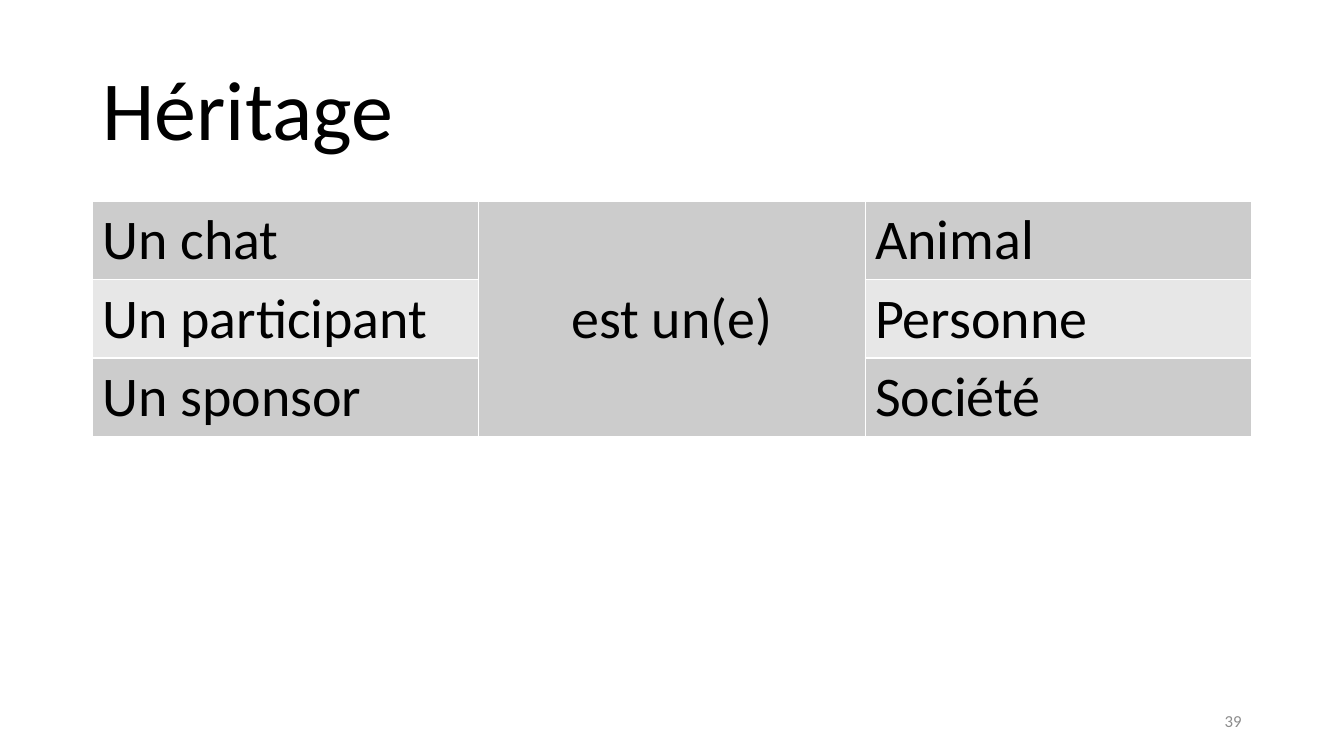
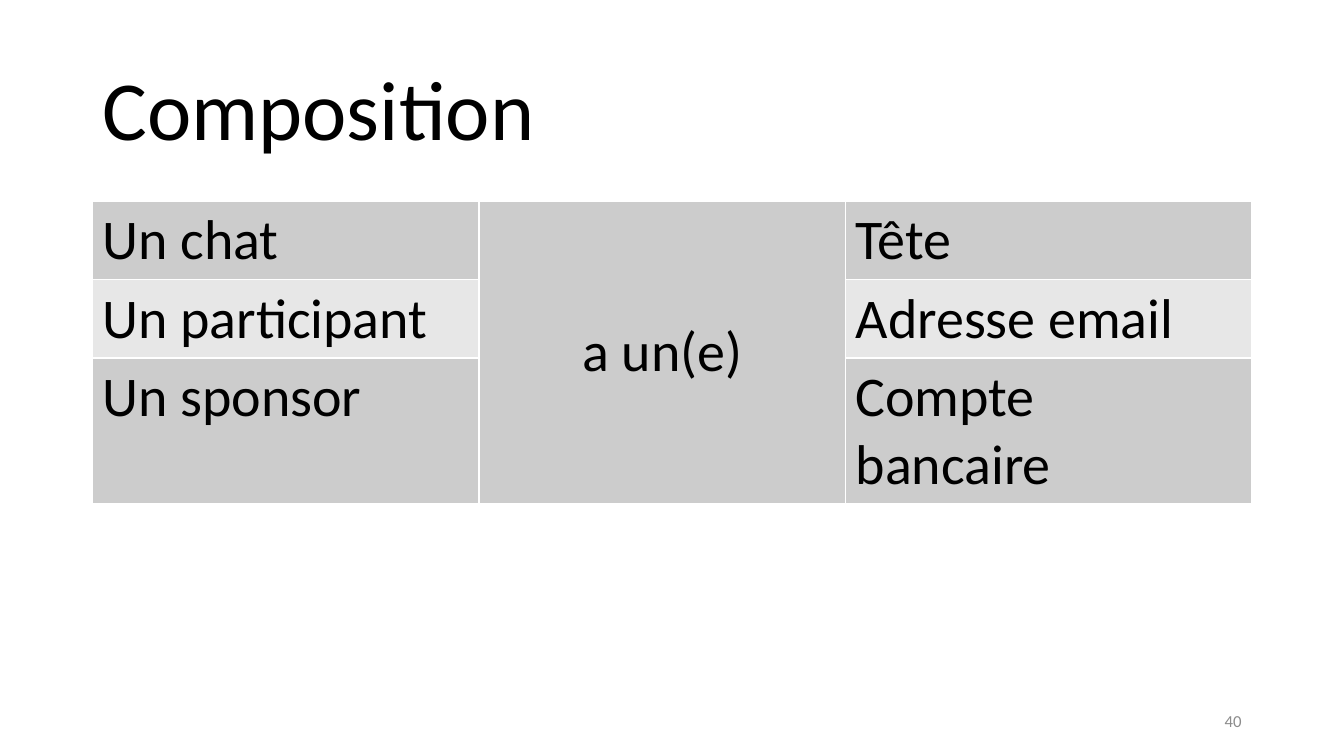
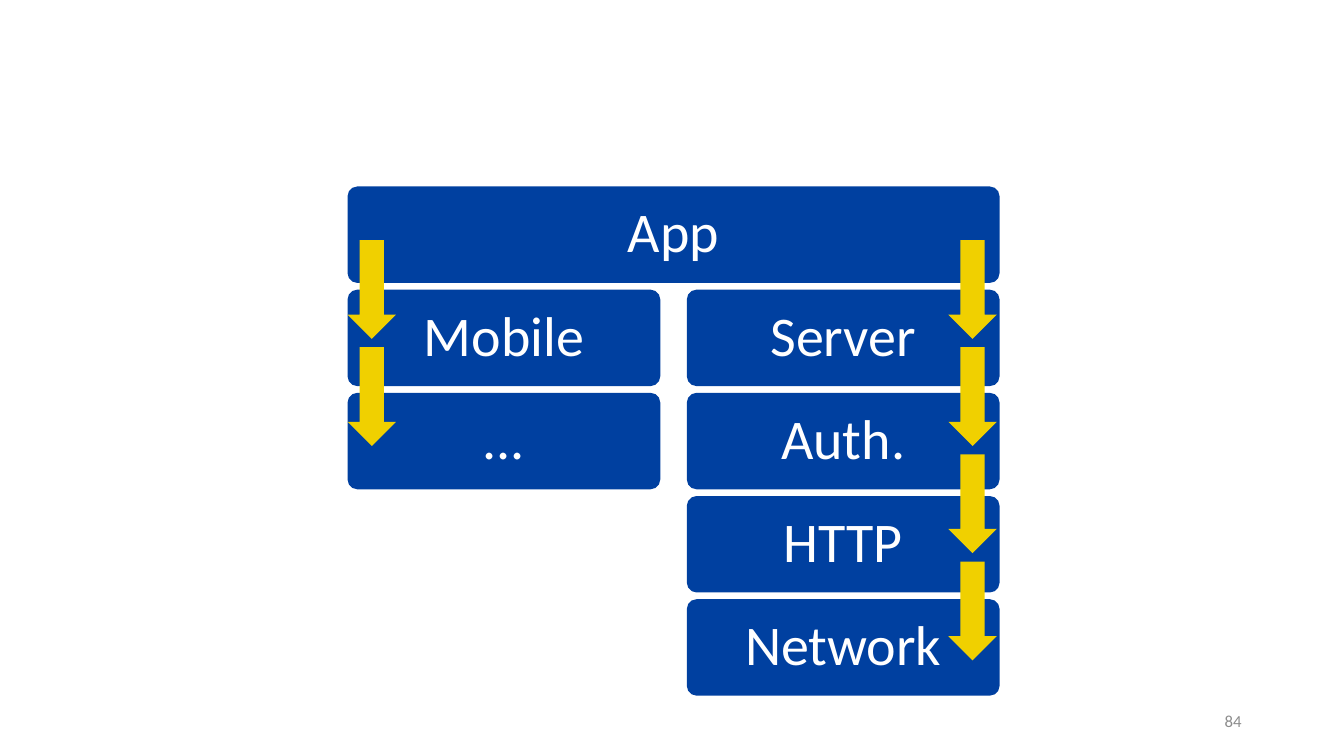
from lxml import etree
from pptx import Presentation
from pptx.dml.color import RGBColor
from pptx.enum import shapes, text
from pptx.oxml.ns import qn
from pptx.util import Cm, Pt

FONT = "Calibri"
BLACK, WHITE, GREY = "000000", "FFFFFF", "8C8C8C"
BAND_DARK, BAND_LIGHT = "CCCCCC", "E7E7E7"
BLUE, YELLOW = "0040A0", "F0D000"
TITLE_ONLY, BLANK = 5, 6

MARGIN, CONTENT_WIDTH = 2.33, 29.21
ROW_HEIGHT = 1.97

LAYERS_LEFT, LAYERS_TOP, LAYERS_WIDTH = 8.76, 4.7, 16.43
LAYER_HEIGHT, LAYER_STEP = 2.43, 2.6
COLUMN_WIDTH = 7.88
ARROW_WIDTH, ARROW_HEIGHT = 1.22, 2.49
ARROW_TOP, ARROW_STEP = 6.05, 2.7


def rgb(colour):
    return RGBColor.from_string(colour)


def write(frame, words, size, colour, align=text.PP_ALIGN.LEFT, line_spacing=None):
    """Put one formatted paragraph, vertically centred, in a text frame."""
    frame.text = words
    frame.word_wrap = True
    frame.vertical_anchor = text.MSO_ANCHOR.MIDDLE
    para = frame.paragraphs[0]
    para.alignment = align
    para.line_spacing = line_spacing
    para.font.name = FONT
    para.font.size = Pt(size)
    para.font.color.rgb = rgb(colour)


def add_page(deck, number, title=None):
    page = deck.slides.add_slide(deck.slide_layouts[TITLE_ONLY if title else BLANK])
    if title:
        box = page.shapes.title
        box.left, box.top = Cm(MARGIN), Cm(1.01)
        box.width, box.height = Cm(CONTENT_WIDTH), Cm(3.68)
        write(box.text_frame, title, 60, BLACK, line_spacing=0.9)
    box = page.shapes.add_textbox(Cm(23.92), Cm(17.65), Cm(7.62), Cm(1.01))
    write(box.text_frame, str(number), 12, GREY, text.PP_ALIGN.RIGHT)
    return page


def set_borders(cell, colour, points):
    properties = cell._tc.get_or_add_tcPr()
    for position, side in enumerate(("a:lnL", "a:lnR", "a:lnT", "a:lnB")):
        line = etree.Element(qn(side), w=str(Pt(points)))
        fill = etree.SubElement(line, qn("a:solidFill"))
        etree.SubElement(fill, qn("a:srgbClr"), val=colour)
        properties.insert(position, line)


def add_relation_table(page, pairs, relation, widths, heights):
    """Draw subject and object columns around one merged relation cell."""
    table = page.shapes.add_table(
        len(pairs), 3, Cm(MARGIN), Cm(5.08), Cm(sum(widths)), Cm(sum(heights))
    ).table
    table.first_row = table.horz_banding = False
    for column, width in zip(table.columns, widths):
        column.width = Cm(width)
    for row, height in zip(table.rows, heights):
        row.height = Cm(height)
    table.cell(0, 1).merge(table.cell(len(pairs) - 1, 1))

    for index, (subject, target) in enumerate(pairs):
        for column, words in enumerate((subject, relation, target)):
            cell = table.cell(index, column)
            cell.fill.solid()
            cell.fill.fore_color.rgb = rgb(BAND_LIGHT if index % 2 else BAND_DARK)
            set_borders(cell, WHITE, 1)
            if cell.is_spanned:
                continue
            if column == 1:
                write(cell.text_frame, words, 40, BLACK, text.PP_ALIGN.CENTER)
                cell.vertical_anchor = text.MSO_ANCHOR.MIDDLE
            else:
                write(cell.text_frame, words, 40, BLACK)
                cell.vertical_anchor = text.MSO_ANCHOR.TOP


def add_solid(page, kind, left, top, width, height, colour):
    shape = page.shapes.add_shape(kind, Cm(left), Cm(top), Cm(width), Cm(height))
    shape.shadow.inherit = False
    shape.fill.solid()
    shape.fill.fore_color.rgb = rgb(colour)
    shape.line.fill.background()
    return shape


def add_layer(page, words, left, level, width):
    box = add_solid(page, shapes.MSO_SHAPE.ROUNDED_RECTANGLE, left,
                    LAYERS_TOP + level * LAYER_STEP, width, LAYER_HEIGHT, BLUE)
    box.adjustments[0] = 0.1
    frame = box.text_frame
    frame.margin_left = frame.margin_right = Cm(0.48)
    frame.margin_top = frame.margin_bottom = Cm(0.48)
    write(frame, words, 40, WHITE, text.PP_ALIGN.CENTER, 0.9)


def add_layer_column(page, names, left, arrow_left):
    """Stack layers below the top one, with an arrow down into each."""
    for level, name in enumerate(names, 1):
        add_layer(page, name, left, level, COLUMN_WIDTH)
    for index in range(len(names)):
        add_solid(page, shapes.MSO_SHAPE.DOWN_ARROW, arrow_left,
                  ARROW_TOP + index * ARROW_STEP, ARROW_WIDTH, ARROW_HEIGHT, YELLOW)


def main():
    deck = Presentation()
    deck.slide_width, deck.slide_height = Cm(33.87), Cm(19.05)

    page = add_page(deck, 39, "Héritage")
    pairs = [("Un chat", "Animal"), ("Un participant", "Personne"),
             ("Un sponsor", "Société")]
    add_relation_table(page, pairs, "est un(e)", [CONTENT_WIDTH / 3] * 3,
                       [ROW_HEIGHT] * 3)

    page = add_page(deck, 40, "Composition")
    pairs = [("Un chat", "Tête"), ("Un participant", "Adresse email"),
             ("Un sponsor", "Compte bancaire")]
    add_relation_table(page, pairs, "a un(e)", [9.74, 9.24, 10.23],
                       [ROW_HEIGHT, ROW_HEIGHT, 3.68])

    page = add_page(deck, 84)
    add_layer(page, "App", LAYERS_LEFT, 0, LAYERS_WIDTH)
    add_layer_column(page, ["Mobile", "..."], LAYERS_LEFT, LAYERS_LEFT)
    add_layer_column(page, ["Server", "Auth.", "HTTP", "Network"],
                     LAYERS_LEFT + LAYERS_WIDTH - COLUMN_WIDTH, 23.9)

    deck.save("out.pptx")


if __name__ == "__main__":
    main()
